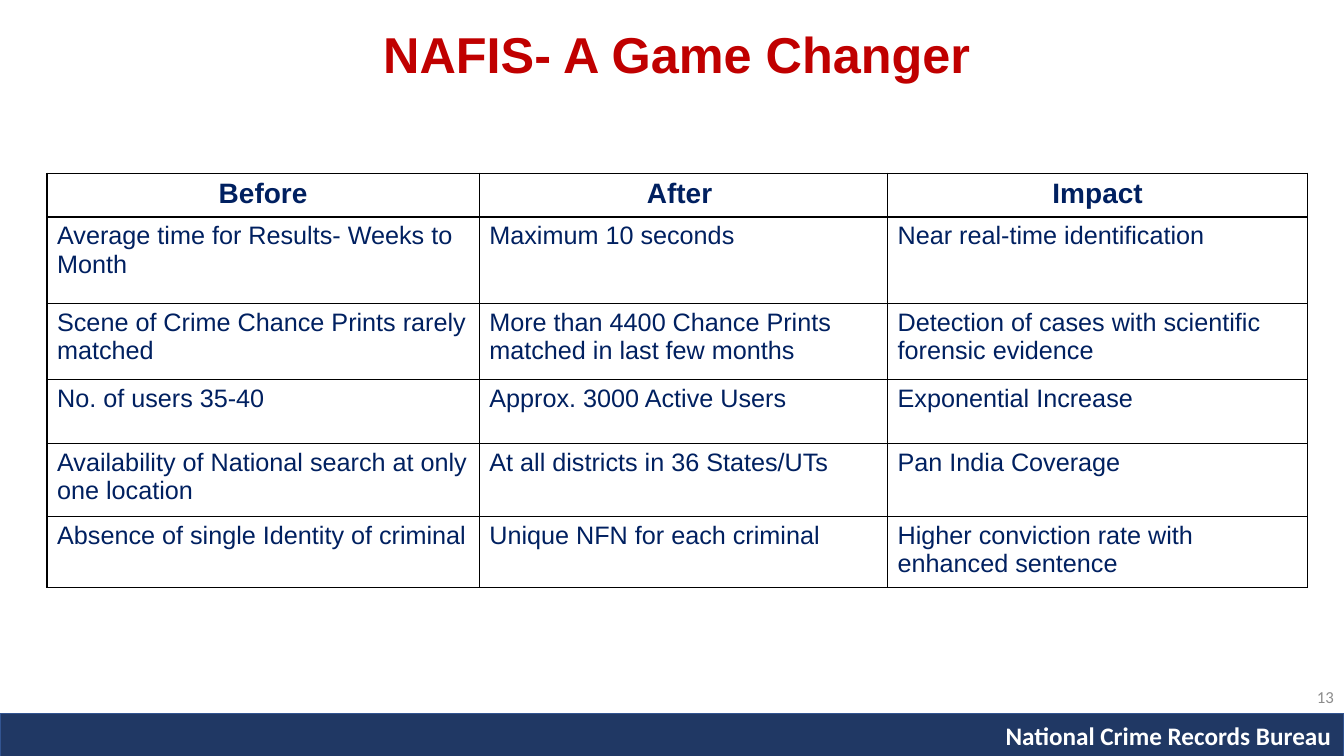
from dataclasses import dataclass

from lxml.etree import SubElement
from pptx import Presentation
from pptx.dml.color import RGBColor
from pptx.enum.shapes import MSO_SHAPE
from pptx.enum.text import MSO_ANCHOR, PP_ALIGN
from pptx.oxml.ns import qn
from pptx.util import Pt


@dataclass(frozen=True)
class Theme:
    heading: str = "C00000"
    body: str = "002060"
    bar: str = "203864"
    bar_edge: str = "325491"
    on_bar: str = "FFFFFF"
    page: str = "8C8C8C"
    border: str = "000000"
    main_font: str = "Arial"
    footer_font: str = "Calibri"
    heading_size: int = 36
    header_size: int = 20
    body_size: int = 18
    page_size: int = 12


theme = Theme()


def write(frame, text, *, size, color, font=theme.main_font, bold=False,
          align=PP_ALIGN.LEFT, anchor=MSO_ANCHOR.TOP, line_spacing=None):
    frame.word_wrap = True
    frame.vertical_anchor = anchor
    paragraph = frame.paragraphs[0]
    paragraph.alignment = align
    paragraph.line_spacing = line_spacing
    run = paragraph.add_run()
    run.text = text
    run.font.name = font
    run.font.size = Pt(size)
    run.font.bold = bold
    run.font.color.rgb = RGBColor.from_string(color)


def outline_cell(cell):
    properties = cell._tc.get_or_add_tcPr()
    for side in ("a:lnL", "a:lnR", "a:lnT", "a:lnB"):
        edge = SubElement(properties, qn(side), w=str(Pt(1)))
        fill = SubElement(edge, qn("a:solidFill"))
        SubElement(fill, qn("a:srgbClr"), val=theme.border)


prs = Presentation()
prs.slide_width, prs.slide_height = Pt(960), Pt(540)
slide = prs.slides.add_slide(prs.slide_layouts[6])
shapes = slide.shapes

# Footer
bar = shapes.add_shape(MSO_SHAPE.RECTANGLE, Pt(0), Pt(509.8), Pt(960), Pt(32.4))
bar.shadow.inherit = False
bar.fill.solid()
bar.fill.fore_color.rgb = RGBColor.from_string(theme.bar)
bar.line.color.rgb = RGBColor.from_string(theme.bar_edge)
bar.line.width = Pt(1)

bureau = shapes.add_textbox(Pt(698), Pt(511.2), Pt(260), Pt(28.8))
write(bureau.text_frame, "National Crime Records Bureau", size=theme.body_size,
      color=theme.on_bar, font=theme.footer_font, bold=True, align=PP_ALIGN.RIGHT)

# Heading
heading = shapes.add_textbox(Pt(99.4), Pt(12.2), Pt(768), Pt(57.6))
write(heading.text_frame, "NAFIS- A Game Changer", size=theme.heading_size,
      color=theme.heading, bold=True, align=PP_ALIGN.CENTER,
      anchor=MSO_ANCHOR.MIDDLE, line_spacing=0.9)

# Comparison table
comparison = [
    ("Before", "After ", "Impact"),
    ("Average time for Results- Weeks to Month", "Maximum 10 seconds",
     "Near real-time identification"),
    ("Scene of Crime Chance Prints rarely matched",
     "More than 4400 Chance Prints matched in last few months",
     "Detection of cases with scientific forensic evidence"),
    ("No. of users 35-40", "Approx. 3000 Active Users", "Exponential Increase"),
    ("Availability of National search at only one location",
     "At all districts in 36 States/UTs", "Pan India Coverage"),
    ("Absence of single Identity of criminal", "Unique NFN for each criminal",
     "Higher conviction rate with enhanced sentence"),
]
column_widths = (308.8, 291.6, 300.2)
row_heights = (15.8, 62, 54, 45.5, 52.5, 45.4)

table = shapes.add_table(len(row_heights), len(column_widths), Pt(33.6), Pt(123.8),
                         Pt(sum(column_widths)), Pt(sum(row_heights))).table
table.first_row = table.horz_banding = False
for column, width in zip(table.columns, column_widths):
    column.width = Pt(width)
for row, height, entries in zip(table.rows, row_heights, comparison):
    row.height = Pt(height)
    is_header = entries is comparison[0]
    for cell, entry in zip(row.cells, entries):
        outline_cell(cell)
        cell.fill.background()
        write(cell.text_frame, entry, color=theme.body, bold=is_header,
              size=theme.header_size if is_header else theme.body_size,
              align=PP_ALIGN.CENTER if is_header else PP_ALIGN.LEFT)

# Page number
page_number = shapes.add_textbox(Pt(743.8), Pt(483.2), Pt(216), Pt(28.8))
write(page_number.text_frame, "13", size=theme.page_size, color=theme.page,
      font=theme.footer_font, align=PP_ALIGN.RIGHT, anchor=MSO_ANCHOR.MIDDLE)

prs.save("out.pptx")
